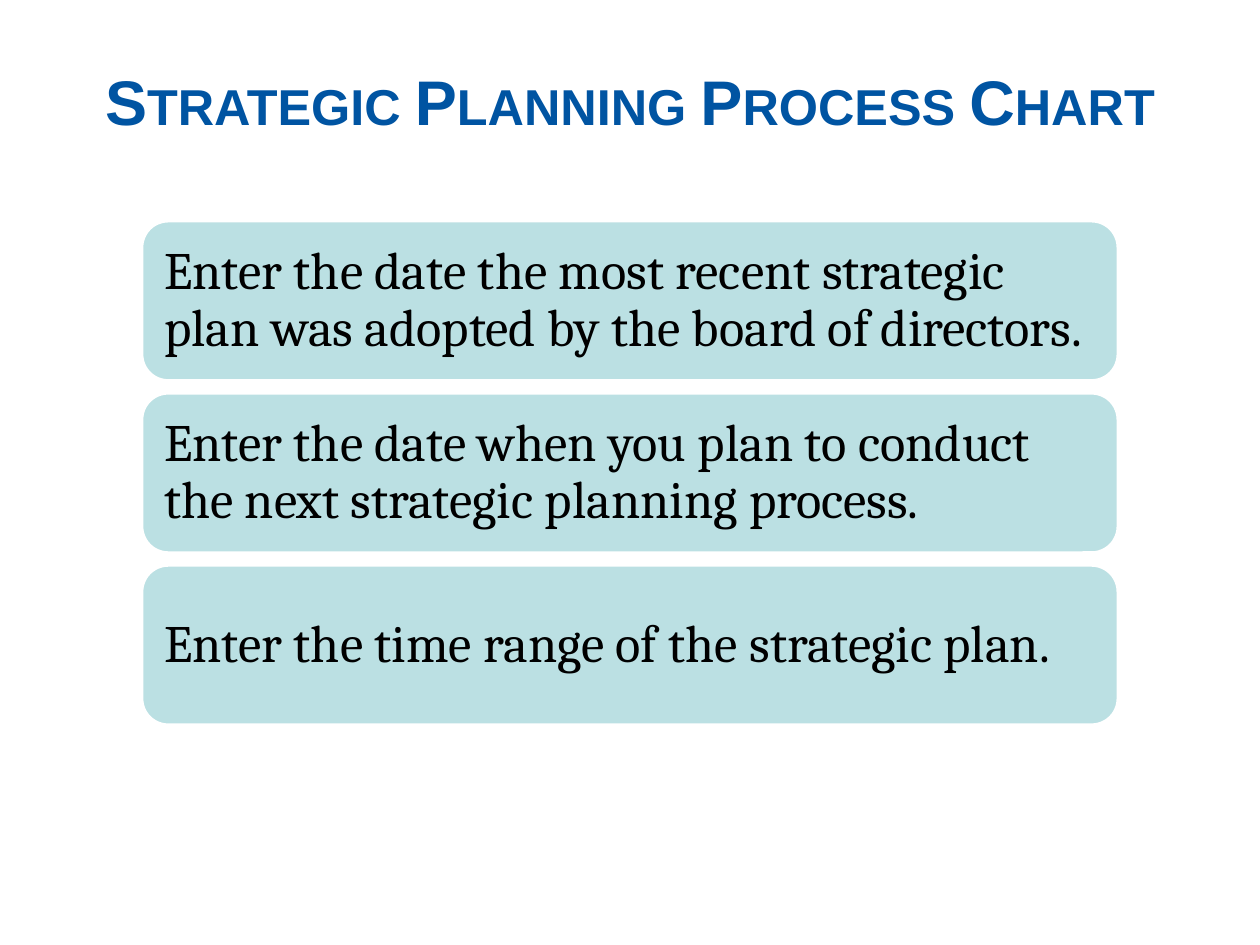
"""Build the strategic planning process slide."""
from dataclasses import dataclass

from pptx import Presentation
from pptx.dml.color import RGBColor as Rgb
from pptx.enum.shapes import MSO_SHAPE as Shape
from pptx.enum.text import MSO_ANCHOR as Anchor, PP_ALIGN as Align
from pptx.util import Cm, Pt

TITLE = "Strategic Planning Process Chart"
STEPS = [
    "Enter the date the most recent strategic plan was adopted by the board of directors.",
    "Enter the date when you plan to conduct the next strategic planning process.",
    "Enter the time range of the strategic plan.",
]


@dataclass(frozen=True)
class Theme:
    """Colours, fonts and type sizes."""
    blue: Rgb = Rgb(0x00, 0x54, 0xA2)
    teal: Rgb = Rgb(0xBB, 0xE0, 0xE3)
    white: Rgb = Rgb(0xFF, 0xFF, 0xFF)
    black: Rgb = Rgb(0x00, 0x00, 0x00)
    head: str = "Arial"
    body: str = "Cambria"
    big: int = 36
    text: int = 30


THEME = Theme()
WIDE, HIGH = 25.4, 19.05
CARD_W, CARD_H, GAP, TOP = 19.69, 3.23, 0.24, 4.45
PAD = 0.3


def write(frame, text, face, size, color, align):
    """Fill a frame with one styled paragraph and return its run."""
    frame.word_wrap = True
    frame.vertical_anchor = Anchor.MIDDLE
    frame.text = text
    para = frame.paragraphs[0]
    para.alignment = align
    run = para.runs[0]
    run.font.name = face
    run.font.size = Pt(size)
    run.font.color.rgb = color
    return run


def add_title(slide):
    """Add the heading in bold small capitals."""
    box = slide.shapes.add_textbox(Cm(1.27), Cm(0.43), Cm(22.86), Cm(3.18))
    run = write(box.text_frame, TITLE, THEME.head, THEME.big, THEME.blue, Align.CENTER)
    run.font.bold = True
    run._r.get_or_add_rPr().set("cap", "small")


def add_card(slide, text, top):
    """Add one rounded card with its step."""
    left = (WIDE - CARD_W) / 2
    card = slide.shapes.add_shape(
        Shape.ROUNDED_RECTANGLE, Cm(left), Cm(top), Cm(CARD_W), Cm(CARD_H))
    card.shadow.inherit = False
    card.fill.solid()
    card.fill.fore_color.rgb = THEME.teal
    card.line.color.rgb = THEME.white
    card.line.width = Pt(2)
    frame = card.text_frame
    frame.margin_left = frame.margin_right = Cm(PAD)
    frame.margin_top = frame.margin_bottom = Cm(PAD)
    write(frame, text, THEME.body, THEME.text, THEME.black, Align.LEFT)
    frame.paragraphs[0].line_spacing = 0.9


def main():
    """Build and save the deck."""
    deck = Presentation()
    deck.slide_width, deck.slide_height = Cm(WIDE), Cm(HIGH)
    slide = deck.slides.add_slide(deck.slide_layouts[6])
    add_title(slide)
    for row, step in enumerate(STEPS):
        add_card(slide, step, TOP + row * (CARD_H + GAP))
    deck.save("out.pptx")


if __name__ == "__main__":
    main()
